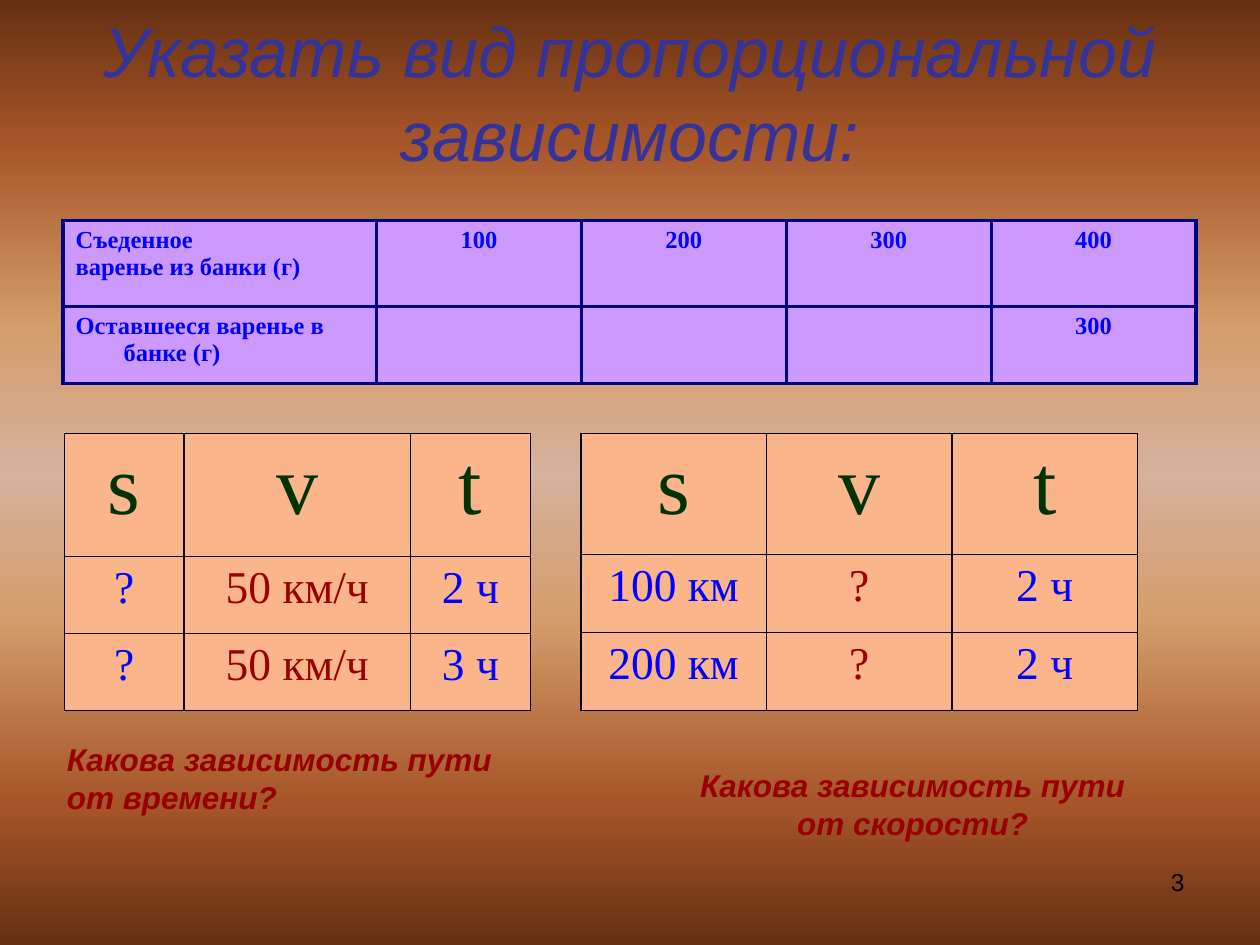
from dataclasses import dataclass

from lxml import etree
from pptx import Presentation
from pptx.dml.color import RGBColor
from pptx.enum import text as t
from pptx.oxml import parse_xml
from pptx.oxml.ns import nsdecls, qn
from pptx.util import Cm, Pt

BLUE, RED, GREEN = "0000FF", "990000", "003300"
HANGING = Cm(0.97)
BACKDROP = [(0, "663012"), (15, "A65528"), (35, "D49E6C"), (50, "D6B19C"),
            (65, "D49E6C"), (85, "A65528"), (100, "663012")]


@dataclass
class Grid:
    left: float
    top: float
    widths: list[float]
    heights: list[float]
    rows: list[list[str]]
    fill: str
    border: str
    border_width: float
    header_size: int
    body_size: int
    header_colors: list[str]
    body_colors: list[str]
    bold: bool = False
    labels_left: bool = False


@dataclass
class Label:
    words: str
    left: float
    top: float
    width: float
    height: float
    align: t.PP_ALIGN
    anchor: t.MSO_ANCHOR = t.MSO_ANCHOR.MIDDLE
    size: int = 18
    color: str = RED
    emphasis: bool = True


def rgb(value: str) -> RGBColor:
    return RGBColor.from_string(value)


def style(paragraph, name: str, size: int, color: str, align,
          bold: bool = False, italic: bool = False) -> None:
    paragraph.alignment = align
    font = paragraph.font
    font.name, font.size, font.bold, font.italic = name, Pt(size), bold, italic
    font.color.rgb = rgb(color)


def paint_background(slide) -> None:
    fill = slide.background.fill
    fill.gradient()
    fill.gradient_angle = 90
    stops = slide._element.find(".//" + qn("a:gsLst"))
    for old_stop in list(stops):
        stops.remove(old_stop)
    for position, color in BACKDROP:
        stop = etree.SubElement(stops, qn("a:gs"), pos=str(position * 1000))
        etree.SubElement(stop, qn("a:srgbClr"), val=color)


def add_title(slide, words: str) -> None:
    title = slide.shapes.title
    title.left, title.top, title.width, title.height = (
        Cm(1.27), Cm(0.76), Cm(22.86), Cm(2.16))
    frame = title.text_frame
    frame.text = words
    frame.word_wrap = True
    frame.auto_size = t.MSO_AUTO_SIZE.NONE
    frame.vertical_anchor = t.MSO_ANCHOR.MIDDLE
    heading = frame.paragraphs[0]
    style(heading, "Arial", 40, "333399", t.PP_ALIGN.CENTER, italic=True)
    run_font = heading.runs[0].font
    run_font.color.rgb = rgb("333399")
    run_font._element.append(parse_xml(
        f'<a:effectLst {nsdecls("a")}><a:outerShdw dist="35921" dir="2700000">'
        '<a:srgbClr val="808080"/></a:outerShdw></a:effectLst>'))


def add_borders(cell, color: str, width: float) -> None:
    properties = cell._tc.get_or_add_tcPr()
    for side in ("lnL", "lnR", "lnT", "lnB"):
        properties.append(parse_xml(
            f'<a:{side} {nsdecls("a")} w="{Pt(width)}"><a:solidFill>'
            f'<a:srgbClr val="{color}"/></a:solidFill></a:{side}>'))


def add_grid(slide, grid: Grid) -> None:
    table = slide.shapes.add_table(
        len(grid.heights), len(grid.widths), Cm(grid.left), Cm(grid.top),
        Cm(sum(grid.widths)), Cm(sum(grid.heights))).table
    table.first_row = table.horz_banding = False
    for column, width in zip(table.columns, grid.widths):
        column.width = Cm(width)
    for row, height in zip(table.rows, grid.heights):
        row.height = Cm(height)
    for r, values in enumerate(grid.rows):
        size = grid.body_size if r else grid.header_size
        colors = grid.body_colors if r else grid.header_colors
        for c, value in enumerate(values):
            cell = table.cell(r, c)
            add_borders(cell, grid.border, grid.border_width)
            cell.fill.solid()
            cell.fill.fore_color.rgb = rgb(grid.fill)
            cell.text_frame.text = value
            is_label = grid.labels_left and c == 0
            align = t.PP_ALIGN.LEFT if is_label else t.PP_ALIGN.CENTER
            for paragraph in cell.text_frame.paragraphs:
                style(paragraph, "Times New Roman", size, colors[c], align, grid.bold)
                indents = paragraph._p.get_or_add_pPr()
                indents.set("marL", str(HANGING))
                indents.set("indent", str(-HANGING))


def add_label(slide, label: Label) -> None:
    box = slide.shapes.add_textbox(
        Cm(label.left), Cm(label.top), Cm(label.width), Cm(label.height))
    frame = box.text_frame
    frame.word_wrap = True
    frame.vertical_anchor = label.anchor
    frame.text = label.words
    style(frame.paragraphs[0], "Arial", label.size, label.color, label.align,
          label.emphasis, label.emphasis)


def motion_grid(left: float, widths: list[float], heights: list[float],
                cases: list[list[str]]) -> Grid:
    """Describe a table of distance, speed and time."""
    return Grid(left, 8.74, widths, heights, [["s", "v", "t"], *cases],
                "FAB58A", "000000", 1, 48, 26, [GREEN] * 3, [BLUE, RED, BLUE])


GRIDS = [
    Grid(1.27, 4.45, [6.32] + [4.13] * 4, [1.73, 1.55],
         [["Съеденное\nваренье из банки (г)", "100", "200", "300", "400"],
          ["Оставшееся варенье в банке (г)", "", "", "", "300"]],
         "CC99FF", "000080", 2, 14, 14, [BLUE] * 5, [BLUE] * 5,
         bold=True, labels_left=True),
    motion_grid(1.3, [2.41, 4.57, 2.41], [2.48, 1.55, 1.55],
                [["?", "50 км/ч", "2 ч"], ["?", "50 км/ч", "3 ч"]]),
    motion_grid(11.71, [3.74] * 3, [2.44, 1.57, 1.57],
                [["100 км", "?", "2 ч"], ["200 км", "?", "2 ч"]]),
]
LABELS = [
    Label("3", 18.2, 17.35, 5.93, 1.32, t.PP_ALIGN.RIGHT, t.MSO_ANCHOR.TOP,
          14, "000000", emphasis=False),
    Label("Какова зависимость пути от времени?", 1.1, 14.8, 9.2, 1.78,
          t.PP_ALIGN.LEFT),
    Label("Какова зависимость пути от скорости?", 13.7, 15.32, 9.4, 1.78,
          t.PP_ALIGN.CENTER),
]


def main() -> None:
    deck = Presentation()
    deck.slide_width, deck.slide_height = Cm(25.4), Cm(19.05)
    slide = deck.slides.add_slide(deck.slide_layouts[5])
    paint_background(slide)
    add_title(slide, "Указать вид пропорциональной зависимости:")
    for grid in GRIDS:
        add_grid(slide, grid)
    for label in LABELS:
        add_label(slide, label)
    deck.save("out.pptx")


if __name__ == "__main__":
    main()
